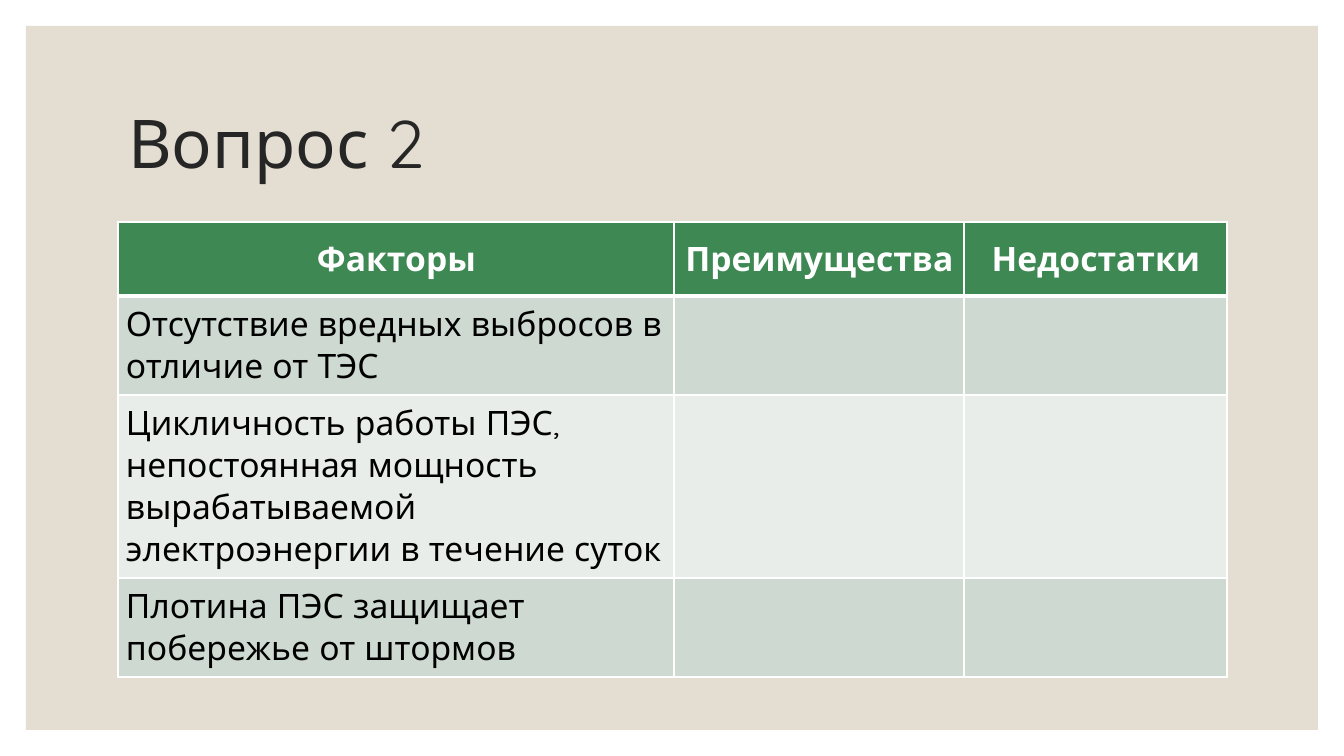
import pptx
import pptx.util
import pptx.dml.color
import pptx.enum.shapes
import pptx.enum.text
import pptx.oxml
import pptx.oxml.ns

RGB = pptx.dml.color.RGBColor
ALIGN = pptx.enum.text.PP_ALIGN
MIDDLE = pptx.enum.text.MSO_ANCHOR.MIDDLE

WIDE, HIGH = 1344, 756
SCALE = 12192000 / WIDE
FONT = "Quicksand"
SAND = RGB(0xE3, 0xDE, 0xD1)
INK = RGB(0x26, 0x26, 0x26)
BLACK = RGB(0x00, 0x00, 0x00)
WHITE = RGB(0xFF, 0xFF, 0xFF)
GREEN = RGB(0x3E, 0x88, 0x53)
BANDS = RGB(0xCE, 0xDA, 0xD1), RGB(0xE8, 0xED, 0xE9)

HEADS = ["Факторы", "Преимущества", "Недостатки"]
FACTORS = [
    "Отсутствие вредных выбросов в отличие от ТЭС",
    "Цикличность работы ПЭС, непостоянная мощность вырабатываемой "
    "электроэнергии в течение суток",
    "Плотина ПЭС защищает побережье от штормов",
]
COLS = [556, 290, 263]
ROWS = [74, 99, 183, 99]


def px(num):
    """Turn px into EMU."""
    return pptx.util.Emu(round(num * SCALE))


def style(para, size, color, bold=False):
    """Format every run of a paragraph."""
    for run in para.runs:
        font = run.font
        font.name, font.size, font.bold = FONT, pptx.util.Pt(size), bold
        font.color.rgb = color


def panel(slide, box):
    """Draw the sand panel behind the content."""
    rect = pptx.enum.shapes.MSO_SHAPE.RECTANGLE
    shape = slide.shapes.add_shape(rect, *map(px, box))
    shape.shadow.inherit = False
    shape.fill.solid()
    shape.fill.fore_color.rgb = SAND
    shape.line.fill.background()


def title(slide, box, text):
    """Place the slide title in its box."""
    shape = slide.shapes.title
    shape.left, shape.top, shape.width, shape.height = map(px, box)
    frame = shape.text_frame
    frame.text = text
    frame.vertical_anchor = MIDDLE
    para = frame.paragraphs[0]
    para.alignment = ALIGN.LEFT
    para.line_spacing = 0.9
    style(para, 48, INK)


def border(cell, side, width):
    """Add one white border to a cell."""
    space = pptx.oxml.ns.nsdecls("a")
    line = pptx.oxml.parse_xml(
        f'<a:ln{side} {space} w="{pptx.util.Pt(width)}"><a:solidFill>'
        f'<a:srgbClr val="{WHITE}"/></a:solidFill></a:ln{side}>'
    )
    cell._tc.get_or_add_tcPr().append(line)


def paint(cell, row, text):
    """Fill, frame and write one cell."""
    head = row == 0
    widths = {"L": 1, "R": 1, "T": 3 if row == 1 else 1, "B": 3 if head else 1}
    for side, width in widths.items():
        border(cell, side, width)
    cell.fill.solid()
    cell.fill.fore_color.rgb = GREEN if head else BANDS[(row - 1) % 2]
    cell.margin_left = px(8)
    cell.margin_right = cell.margin_top = cell.margin_bottom = px(7)
    cell.text_frame.text = text
    para = cell.text_frame.paragraphs[0]
    if head:
        cell.vertical_anchor = MIDDLE
        para.alignment = ALIGN.CENTER
    style(para, 24, WHITE if head else BLACK, head)


def grid(slide, left, top):
    """Build the table of factors from its top left corner."""
    box = left, top, sum(COLS), sum(ROWS)
    table = slide.shapes.add_table(len(ROWS), len(COLS), *map(px, box)).table
    for col, width in zip(table.columns, COLS):
        col.width = px(width)
    for row, height in zip(table.rows, ROWS):
        row.height = px(height)
    texts = [HEADS] + [[text, "", ""] for text in FACTORS]
    for i, line in enumerate(texts):
        for j, text in enumerate(line):
            paint(table.cell(i, j), i, text)


def main():
    """Build the slide and save it."""
    deck = pptx.Presentation()
    deck.slide_width, deck.slide_height = px(WIDE), px(HIGH)
    slide = deck.slides.add_slide(deck.slide_layouts[5])
    panel(slide, (26, 26, 1292, 704))
    tree = slide.shapes._spTree
    tree.append(slide.shapes.title._element)
    title(slide, (118, 71, 1109, 151), "Вопрос 2")
    grid(slide, 118, 222)
    deck.save("out.pptx")


if __name__ == "__main__":
    main()
